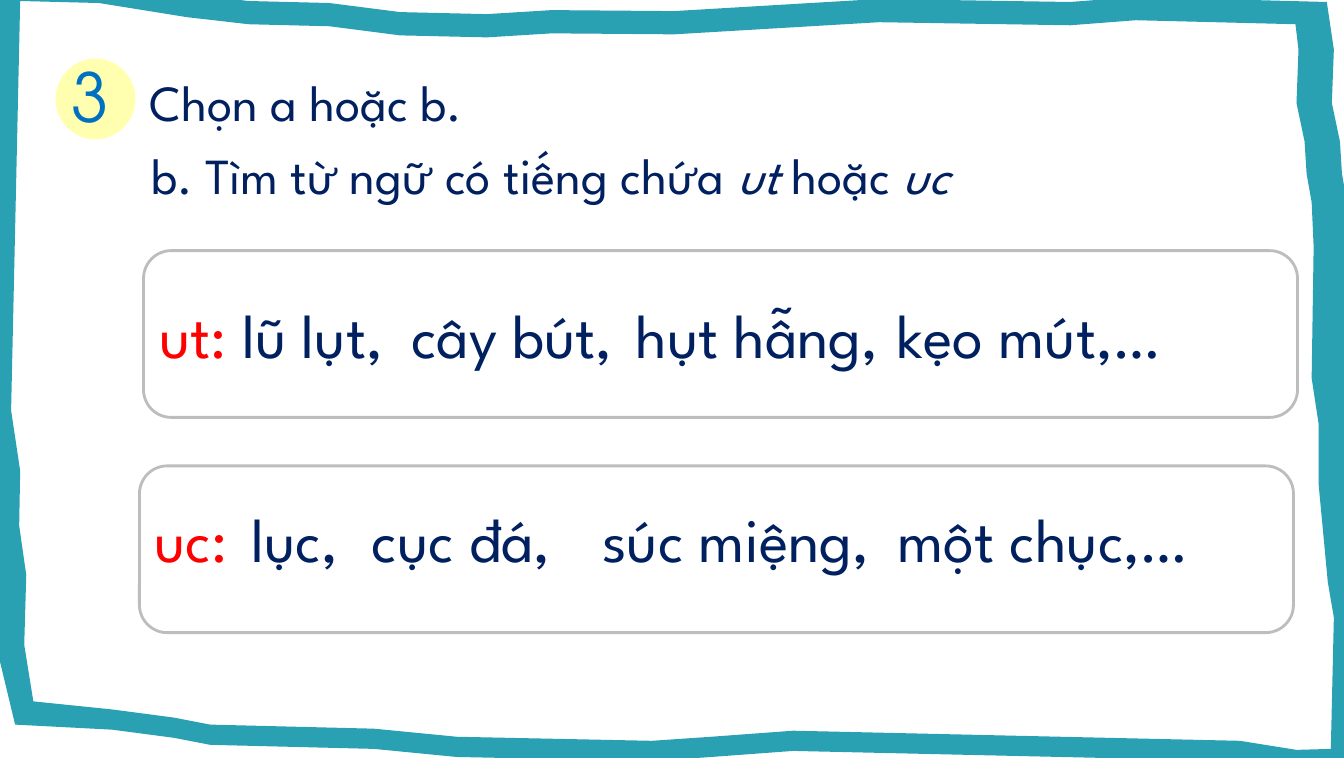
from pptx import Presentation
from pptx.dml.color import RGBColor
from pptx.enum.shapes import MSO_SHAPE
from pptx.enum.text import MSO_ANCHOR, MSO_AUTO_SIZE, PP_ALIGN
from pptx.util import Inches, Pt

NAVY, RED, BLUE = "002060", "FF0000", "0070C0"
TEAL, GRAY, WHITE, YELLOW = "2AA1B3", "BDBDBD", "FFFFFF", "FFFFAF"


def paint(shape, fill, line=None):
    shape.shadow.inherit = False
    shape.fill.solid()
    shape.fill.fore_color.rgb = RGBColor.from_string(fill)
    if line:
        shape.line.color.rgb = RGBColor.from_string(line)
        shape.line.width = Pt(2)
    else:
        shape.line.fill.background()


def write(box, *texts, size=44, color=NAVY, font="League Spartan",
          anchor=MSO_ANCHOR.TOP, inset=None, italics=()):
    frame = box.text_frame
    frame.word_wrap = True
    frame.auto_size = MSO_AUTO_SIZE.NONE
    frame.vertical_anchor = anchor
    if inset is not None:
        frame.margin_left = frame.margin_right = Inches(inset)
        frame.margin_top = frame.margin_bottom = Inches(inset)
    para = frame.paragraphs[0]
    para.alignment = PP_ALIGN.JUSTIFY
    for text in texts:
        span = para.add_run()
        span.text = text
        span.font.name = font
        span.font.size = Pt(size)
        span.font.italic = text in italics
        span.font.color.rgb = RGBColor.from_string(color)


deck = Presentation()
deck.slide_width, deck.slide_height = Inches(13.3), Inches(7.5)
page = deck.slides.add_slide(deck.slide_layouts[5])

# Hand-cut frame, clockwise from the top left. Each side has the inner and
# outer corner where it starts, the outward shift that gives its thickness,
# and the bends of its inner edge.
top_side = ((0.2, 0.01), (-0.16, -0.2), (0, -0.23), [
    (0.98, 0.03), (1.85, 0.17), (2.46, 0.24), (3.26, 0.26), (3.96, 0.35),
    (4.82, 0.37), (5.46, 0.33), (6.67, 0.34), (8.7, 0.22), (10.59, 0.25),
    (11.24, 0.2)])
right_side = ((12.82, 0.24), (13.13, 0.02), (0.35, 0), [
    (12.85, 0.49), (12.83, 1.02), (12.91, 1.4), (12.93, 1.72), (12.98, 2),
    (13, 2.44), (12.98, 3.74), (13.05, 4.2), (13.05, 4.8), (13.14, 5.76),
    (13.2, 6.11)])
bottom_side = ((13.17, 7.41), (13.45, 7.58), (0, 0.2), [
    (12.83, 7.42), (12.27, 7.33), (7.85, 7.23), (7.04, 7.29), (6.45, 7.33),
    (4.52, 7.29), (3.7, 7.21), (2.08, 7.17), (1.72, 7.1), (1.11, 7.02)])
left_side = ((0.33, 6.94), (0.15, 7.17), (-0.28, 0), [
    (0.24, 6.38), (0.26, 5.69), (0.19, 5.2), (0.2, 4.66), (0.11, 4.06)])

inner_edge, outer_edge = [], []
for inner_corner, outer_corner, shift, bends in (
        top_side, right_side, bottom_side, left_side):
    inner_edge += [inner_corner, *bends]
    outer_edge += [outer_corner,
                   *((x + shift[0], y + shift[1]) for x, y in bends)]

# The inner edge runs the other way round, so that it cuts a hole
outline, hole = [[(Inches(x), Inches(y)) for x, y in edge]
                 for edge in (outer_edge, inner_edge[::-1])]
builder = page.shapes.build_freeform(*outline[0])
builder.add_line_segments(outline[1:])
builder.move_to(*hole[0])
builder.add_line_segments(hole[1:])
paint(builder.convert_to_shape(), TEAL)

# Exercise number
badge = page.shapes.add_shape(MSO_SHAPE.OVAL, Inches(0.55), Inches(0.58),
                              Inches(0.79), Inches(0.8))
paint(badge, YELLOW)
number = page.shapes.add_textbox(Inches(0.58), Inches(0.69),
                                 Inches(0.8), Inches(0.52))
write(number, "3", size=48, color=BLUE, font="TeX Gyre Adventor",
      anchor=MSO_ANCHOR.MIDDLE, inset=0.13)

# Title and task
title = page.shapes.title
title.left, title.top = Inches(1.38), Inches(0.65)
title.width, title.height = Inches(11.18), Inches(0.71)
write(title, "Chọn a hoặc b.", size=36)
task = page.shapes.add_textbox(Inches(1.4), Inches(1.38),
                               Inches(10.57), Inches(0.71))
write(task, "b. Tìm từ ngữ có tiếng chứa ", "ut ", "hoặc", " uc",
      size=36, italics=("ut ", " uc"))

# Answer panels: panel left and top, text top, then left, width and text of
# the red rhyme and its words
answer_rows = [
    (1.42, 2.48, 2.89, [
        (1.48, 1.17, "ut:"), (2.3, 2.62, "lũ lụt,"), (3.97, 3.44, "cây bút,"),
        (6.19, 3.53, "hụt hẫng,"), (8.78, 3.44, "kẹo mút,…")]),
    (1.38, 4.61, 4.91, [
        (1.43, 1.17, "uc:"), (2.39, 1.72, "lục,"), (3.58, 3.44, "cục đá,"),
        (5.86, 3.44, "súc miệng,"), (8.78, 3.44, "một chục,…")]),
]
for panel_left, panel_top, text_top, answers in answer_rows:
    panel = page.shapes.add_shape(
        MSO_SHAPE.ROUNDED_RECTANGLE, Inches(panel_left), Inches(panel_top),
        Inches(11.42), Inches(1.65))
    paint(panel, WHITE, GRAY)
    for left, width, text in answers:
        box = page.shapes.add_textbox(Inches(left), Inches(text_top),
                                      Inches(width), Inches(0.84))
        write(box, text, color=RED if text.endswith(":") else NAVY)

deck.save("out.pptx")
